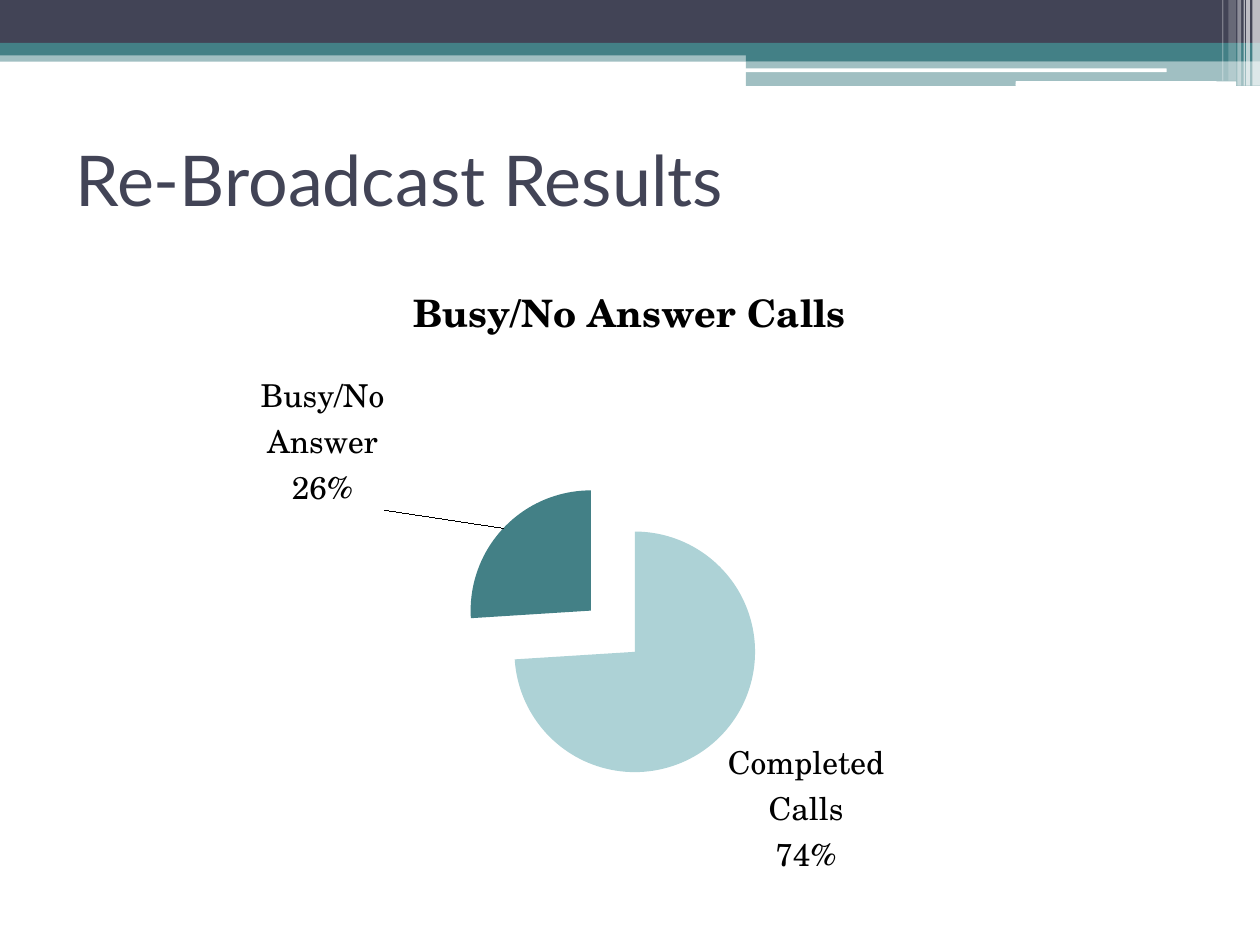
"""Build the re-broadcast results slide with its exploded pie chart."""
from dataclasses import dataclass

from lxml.etree import SubElement
from pptx import Presentation
from pptx.chart.data import CategoryChartData
from pptx.dml.color import RGBColor
from pptx.enum.chart import XL_CHART_TYPE, XL_LABEL_POSITION
from pptx.enum.shapes import MSO_SHAPE
from pptx.enum.text import MSO_ANCHOR, PP_ALIGN
from pptx.oxml import parse_xml
from pptx.oxml.ns import nsdecls, qn
from pptx.util import Inches, Pt


@dataclass(frozen=True)
class Theme:
    ink: str = "424456"
    teal: str = "438086"
    pale: str = "ADD2D6"
    white: str = "FFFFFF"
    black: str = "000000"
    title_font: str = "Lato"
    chart_font: str = "TeX Gyre Schola"
    title_size: float = 40
    chart_title_size: float = 21.6
    label_size: float = 18


THEME = Theme()
TITLE = "Re-Broadcast Results"
CHART_TITLE = "Busy/No Answer Calls"
CALLS = [("Completed Calls", 74, THEME.pale), ("Busy/No Answer", 26, THEME.teal)]
EXPLOSION = 25
PIE_SHARES = {"x": 0.35, "y": 0.35, "w": 0.27, "h": 0.46}
BUSY_LABEL_SHIFT = {"x": -0.1, "y": -0.02}

# Shares are percentages of the slide: left, top, width, height.
TITLE_AREA = (5, 11.07, 90, 15.6)
CHART_AREA = (5, 26.67, 90, 69.2)
BANDS = [
    ((0, 5.33, 100, 1.2), THEME.teal, 50),
    ((0, 0, 100, 4.53), THEME.ink, 100),
    ((0, 4.53, 100, 1.33), THEME.teal, 100),
    ((59.2, 5.2, 40.8, 1.27), THEME.teal, 100),
    ((59.2, 6.45, 40.8, 2.63), THEME.teal, 50),
]
RULES = [(59.1, 7.24, 33.5, 0.4), (80.6, 8.6, 17.5, 0.5)]
STRIPES = [
    (99.4, 0.6, 9.07, 65), (98.9, 0.3, 9.07, 65), (98.7, 0.1, 9.07, 60),
    (98.2, 0.3, 9.07, 40), (97.5, 0.6, 8.53, 20), (97, 0.1, 8.53, 30),
]


def place(deck, area):
    sides = (deck.slide_width, deck.slide_height) * 2
    return [int(side * share / 100) for side, share in zip(sides, area)]


def style_font(font, name, size, color, bold=False):
    font.name, font.size, font.bold = name, Pt(size), bold
    font.color.rgb = RGBColor.from_string(color)


def add_block(deck, page, area, color, opacity=100, kind=MSO_SHAPE.RECTANGLE):
    block = page.shapes.add_shape(kind, *place(deck, area))
    block.shadow.inherit = False
    block.line.fill.background()
    block.fill.solid()
    block.fill.fore_color.rgb = RGBColor.from_string(color)
    if opacity < 100:
        tint = block.fill._xPr.find(".//" + qn("a:srgbClr"))
        SubElement(tint, qn("a:alpha"), val=str(opacity * 1000))


def manual_layout(shares, inner=False):
    parts = '<c:layoutTarget val="inner"/>' if inner else ""
    if inner:
        parts += '<c:xMode val="edge"/><c:yMode val="edge"/>'
    parts += "".join(f'<c:{key} val="{share}"/>' for key, share in shares.items())
    return parse_xml(
        f'<c:layout {nsdecls("c")}><c:manualLayout>{parts}</c:manualLayout></c:layout>'
    )


def show_labels(series):
    labels = series.data_labels
    labels.show_category_name = labels.show_percentage = True
    labels.show_value = False
    labels.position = XL_LABEL_POSITION.OUTSIDE_END
    style_font(labels.font, THEME.chart_font, THEME.label_size, THEME.black)
    root = labels._element
    leader = root.find(qn("c:showLeaderLines"))
    if leader is None:
        leader = SubElement(root, qn("c:showLeaderLines"))
    leader.set("val", "1")
    separator = parse_xml(f'<c:separator {nsdecls("c")}>\n</c:separator>')
    leader.addprevious(separator)

    busy = series.points[1].data_label
    busy.position = XL_LABEL_POSITION.OUTSIDE_END
    style_font(busy.font, THEME.chart_font, THEME.label_size, THEME.black)
    label = root.find(qn("c:dLbl"))
    label.find(qn("c:idx")).addnext(manual_layout(BUSY_LABEL_SHIFT))
    for flag, shown in (("showVal", "0"), ("showCatName", "1"), ("showPercent", "1")):
        label.find(qn(f"c:{flag}")).set("val", shown)
    label.append(parse_xml(f'<c:separator {nsdecls("c")}>\n</c:separator>'))


def add_pie(deck, page):
    data = CategoryChartData()
    data.categories = [name for name, _, _ in CALLS]
    data.add_series(CHART_TITLE, [share for _, share, _ in CALLS])
    frame = page.shapes.add_chart(XL_CHART_TYPE.PIE, *place(deck, CHART_AREA), data)
    chart = frame.chart
    style_font(chart.font, THEME.chart_font, THEME.label_size, THEME.black)
    chart.has_legend = False
    chart.has_title = True
    heading = chart.chart_title.text_frame
    heading.text = CHART_TITLE
    style_font(heading.paragraphs[0].runs[0].font, THEME.chart_font,
               THEME.chart_title_size, THEME.black, bold=True)

    plot = chart.plots[0]
    plot.vary_by_categories = True
    series = plot.series[0]
    for index, (_, _, color) in enumerate(CALLS):
        fill = series.points[index].format.fill
        fill.solid()
        fill.fore_color.rgb = RGBColor.from_string(color)
    explosion = parse_xml(f'<c:explosion {nsdecls("c")} val="{EXPLOSION}"/>')
    series._element.find(qn("c:dPt")).addprevious(explosion)
    show_labels(series)

    area = plot._element.getparent()
    old_layout = area.find(qn("c:layout"))
    if old_layout is not None:
        area.remove(old_layout)
    area.insert(0, manual_layout(PIE_SHARES, inner=True))


def main():
    deck = Presentation()
    deck.slide_width, deck.slide_height = Inches(10), Inches(7.5)
    page = deck.slides.add_slide(deck.slide_layouts[5])
    for area, color, opacity in BANDS:
        add_block(deck, page, area, color, opacity)
    for area in RULES:
        add_block(deck, page, area, THEME.white, kind=MSO_SHAPE.ROUNDED_RECTANGLE)
    for left, width, height, opacity in STRIPES:
        add_block(deck, page, (left, 0, width, height), THEME.white, opacity)

    title = page.shapes.title
    title.left, title.top, title.width, title.height = place(deck, TITLE_AREA)
    title.text_frame.text = TITLE
    title.text_frame.vertical_anchor = MSO_ANCHOR.MIDDLE
    para = title.text_frame.paragraphs[0]
    para.alignment = PP_ALIGN.LEFT
    style_font(para.runs[0].font, THEME.title_font, THEME.title_size, THEME.ink)

    add_pie(deck, page)
    deck.save("out.pptx")


if __name__ == "__main__":
    main()
